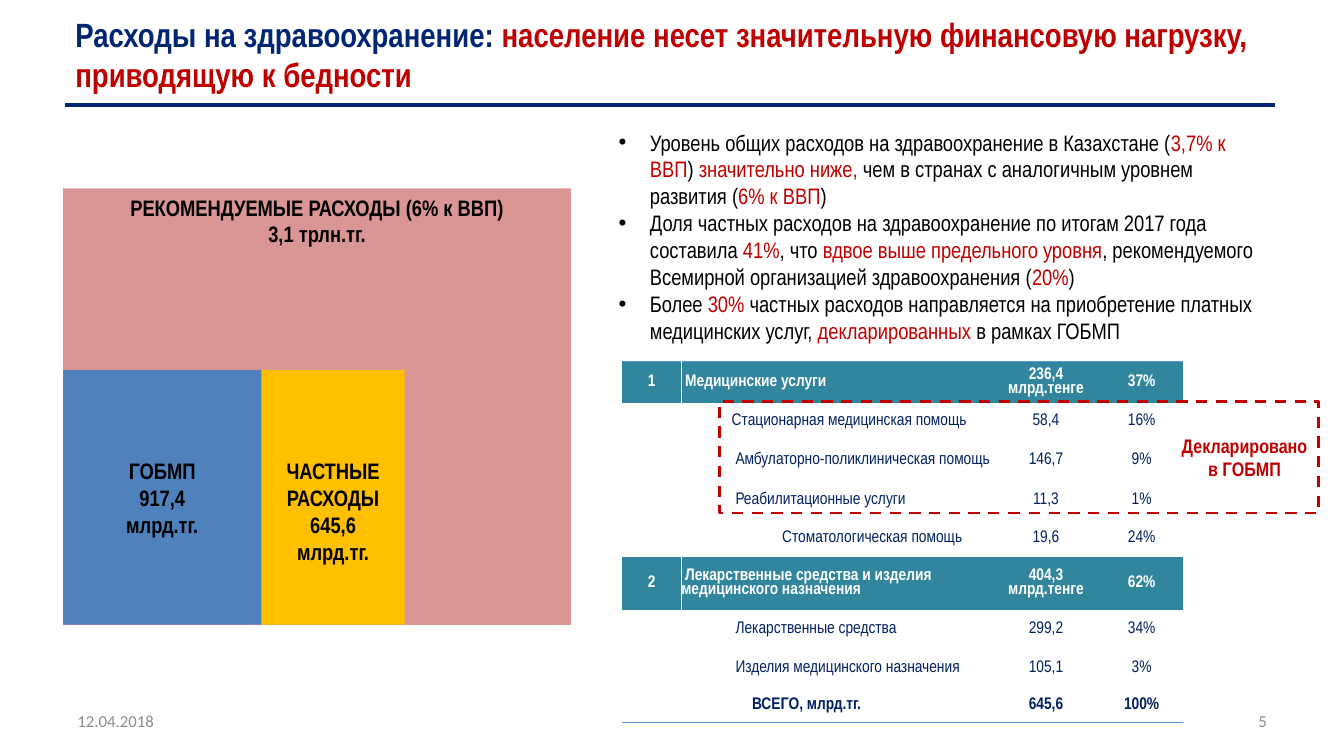
from dataclasses import dataclass
from typing import Optional

from lxml import etree
from pptx import Presentation
from pptx.dml.color import RGBColor
from pptx.enum.dml import MSO_LINE
from pptx.enum.shapes import MSO_CONNECTOR, MSO_SHAPE
from pptx.enum.text import MSO_ANCHOR, PP_ALIGN
from pptx.oxml.ns import qn
from pptx.util import Cm, Pt

LEFT, CENTER, RIGHT = PP_ALIGN.LEFT, PP_ALIGN.CENTER, PP_ALIGN.RIGHT
TOP, MIDDLE = MSO_ANCHOR.TOP, MSO_ANCHOR.MIDDLE
RECT, STRAIGHT, DASH = MSO_SHAPE.RECTANGLE, MSO_CONNECTOR.STRAIGHT, MSO_LINE.DASH


@dataclass(frozen=True)
class Theme:
    navy: str = "002673"
    ink: str = "002060"
    red: str = "C00000"
    black: str = "000000"
    white: str = "FFFFFF"
    gray: str = "8C8C8C"
    pink: str = "D99694"
    gold: str = "FFC000"
    blue: str = "4F81BD"
    teal: str = "31859C"
    rule: str = "5B9BD5"
    main: str = "Arial Narrow"
    foot: str = "Calibri"
    title: int = 24
    body: int = 16
    call: int = 14
    small: int = 12


THEME = Theme()


@dataclass(frozen=True)
class Style:
    size: int
    color: str
    bold: bool = False
    font: str = THEME.main
    align: PP_ALIGN = LEFT


@dataclass(frozen=True)
class Box:
    left: float
    top: float
    width: float
    height: float

    def cm(self) -> tuple:
        return Cm(self.left), Cm(self.top), Cm(self.width), Cm(self.height)


@dataclass(frozen=True)
class Block:
    box: Box
    fill: str
    lines: tuple
    anchor: MSO_ANCHOR = MIDDLE
    inset: float = 0.13


@dataclass(frozen=True)
class Label:
    box: Box
    lines: tuple
    style: Style
    anchor: MSO_ANCHOR = MIDDLE
    bullet: bool = False


@dataclass(frozen=True)
class Row:
    height: float
    num: str
    name: str
    total: str
    share: str
    indent: float = 1.27
    head: bool = False


# Parts between bars are red
LABELS = (
    Label(Box(1.65, 0.33, 31.06, 2.06),
          ("Расходы на здравоохранение: |население несет значительную финансовую нагрузку, приводящую к бедности",),
          Style(THEME.title, THEME.navy, True)),
    Label(Box(1.7, 17.65, 7.9, 1.02), ("12.04.2018",),
          Style(THEME.small, THEME.gray, font=THEME.foot)),
    Label(Box(24.28, 17.65, 7.9, 1.02), ("5",),
          Style(THEME.small, THEME.gray, font=THEME.foot, align=RIGHT)),
    Label(Box(15.34, 3.12, 16.61, 5.74), (
        "Уровень общих расходов на здравоохранение в Казахстане (|3,7% к ВВП|) |значительно ниже, |"
        "чем в странах с аналогичным уровнем развития (|6% к ВВП|)",
        "Доля частных расходов на здравоохранение по итогам 2017 года составила |41%|, что |"
        "вдвое выше предельного уровня|, рекомендуемого Всемирной организацией здравоохранения (|20%|)",
        "Более |30%| частных расходов направляется на приобретение платных медицинских услуг, |"
        "декларированных| в рамках ГОБМП",
    ), Style(THEME.body, THEME.black), TOP, True),
    Label(Box(29.5, 10.8, 3.73, 1.45), ("Декларировано в ГОБМП",),
          Style(THEME.call, THEME.red, True, align=CENTER), TOP),
)

BLOCKS = (
    Block(Box(1.59, 4.75, 12.8, 11), THEME.pink,
          ("РЕКОМЕНДУЕМЫЕ РАСХОДЫ (6% к ВВП)", "3,1 трлн.тг."), TOP),
    Block(Box(6.59, 9.33, 3.61, 6.41), THEME.gold,
          ("ЧАСТНЫЕ РАСХОДЫ", "645,6", "млрд.тг."), inset=0.81),
    Block(Box(1.59, 9.33, 5, 6.41), THEME.blue, ("ГОБМП", "917,4", "млрд.тг.")),
)

COLS = (1.5, 7.82, 2.74, 2.08)
ROWS = (
    Row(1.04, "1", " Медицинские услуги", "236,4 млрд.тенге", "37%", 0, True),
    Row(0.94, "", "Стационарная медицинская помощь", "58,4", "16%"),
    Row(1.02, "", " Амбулаторно-поликлиническая помощь", "146,7", "9%"),
    Row(0.99, "", " Реабилитационные услуги", "11,3", "1%"),
    Row(0.94, "", "Стоматологическая помощь", "19,6", "24%", 2.54),
    Row(1.32, "2", " Лекарственные средства и изделия медицинского назначения",
        "404,3 млрд.тенге", "62%", 0, True),
    Row(0.99, "", " Лекарственные средства", "299,2", "34%"),
    Row(0.99, "", " Изделия медицинского назначения", "105,1", "3%"),
    Row(0.86, "ВСЕГО, млрд.тг.", "", "645,6", "100%", 0),
)


def write(frame, lines: tuple, style: Style) -> None:
    for i, line in enumerate(lines):
        para = frame.paragraphs[0] if i == 0 else frame.add_paragraph()
        para.alignment = style.align
        for j, part in enumerate(line.split("|")):
            run = para.add_run()
            run.text = part
            font = run.font
            font.name, font.size, font.bold = style.font, Pt(style.size), style.bold
            font.color.rgb = RGBColor.from_string(THEME.red if j % 2 else style.color)


def add_label(slide, label: Label) -> None:
    frame = slide.shapes.add_textbox(*label.box.cm()).text_frame
    frame.word_wrap, frame.vertical_anchor = True, label.anchor
    write(frame, label.lines, label.style)
    if label.bullet:
        for para in frame.paragraphs:
            props = para._p.get_or_add_pPr()
            props.set("marL", str(Cm(0.79)))
            props.set("indent", str(-Cm(0.79)))
            etree.SubElement(props, qn("a:buFont")).set("typeface", "Arial")
            etree.SubElement(props, qn("a:buChar")).set("char", "•")


def add_rect(slide, box: Box):
    shape = slide.shapes.add_shape(RECT, *box.cm())
    shape.shadow.inherit = False
    return shape


def add_block(slide, block: Block) -> None:
    shape = add_rect(slide, block.box)
    shape.fill.solid()
    shape.fill.fore_color.rgb = RGBColor.from_string(block.fill)
    shape.line.fill.background()
    frame = shape.text_frame
    frame.word_wrap, frame.vertical_anchor = True, block.anchor
    frame.margin_top = Cm(block.inset)
    write(frame, block.lines, Style(THEME.body, THEME.black, True, align=CENTER))


def set_edge(cell, side: str, color: Optional[str]) -> None:
    edge = etree.SubElement(cell._tc.get_or_add_tcPr(), qn(f"a:ln{side}"), w=str(Pt(1)))
    if color:
        fill = etree.SubElement(edge, qn("a:solidFill"))
        etree.SubElement(fill, qn("a:srgbClr")).set("val", color)
        etree.SubElement(edge, qn("a:prstDash")).set("val", "solid")
    else:
        etree.SubElement(edge, qn("a:noFill"))


def add_costs(slide) -> None:
    box = Box(15.67, 9.11, sum(COLS), sum(row.height for row in ROWS))
    table = slide.shapes.add_table(len(ROWS), len(COLS), *box.cm()).table
    table.first_row = table.horz_banding = False
    for col, width in zip(table.columns, COLS):
        col.width = Cm(width)
    last = len(ROWS) - 1
    for r, row in enumerate(ROWS):
        table.rows[r].height = Cm(row.height)
        for c, text in enumerate((row.num, row.name, row.total, row.share)):
            cell = table.cell(r, c)
            cell.vertical_anchor = MIDDLE
            cell.margin_left = Cm(row.indent if c == 1 else 0)
            cell.margin_right = cell.margin_top = cell.margin_bottom = 0
            # Borders
            set_edge(cell, "L", THEME.white if row.head and c == 1 else None)
            set_edge(cell, "R", THEME.white if row.head and c == 0 else None)
            set_edge(cell, "T", THEME.rule if r == 0 else None)
            set_edge(cell, "B", THEME.rule if r == last else None)
            if row.head:
                cell.fill.solid()
                cell.fill.fore_color.rgb = RGBColor.from_string(THEME.teal)
            else:
                cell.fill.background()
            if text:
                write(cell.text_frame, (text,), Style(
                    THEME.small, THEME.white if row.head else THEME.ink,
                    row.head or r == last, align=LEFT if c == 1 else CENTER))
                cell.text_frame.paragraphs[0].line_spacing = 0.9
    table.cell(last, 0).merge(table.cell(last, 1))


def main() -> None:
    deck = Presentation()
    deck.slide_width, deck.slide_height = Cm(33.87), Cm(19.05)
    slide = deck.slides.add_slide(deck.slide_layouts[6])

    # Rule under the title
    rule = slide.shapes.add_connector(STRAIGHT, Cm(1.65), Cm(2.64), Cm(32.13), Cm(2.64))
    rule.line.color.rgb, rule.line.width = RGBColor.from_string(THEME.navy), Pt(3)
    etree.SubElement(rule._element.spPr, qn("a:effectLst"))

    # Spending areas, table and texts
    for block in BLOCKS:
        add_block(slide, block)
    add_costs(slide)
    for label in LABELS:
        add_label(slide, label)

    # Dashed frame around declared services
    frame = add_rect(slide, Box(18.14, 10.11, 15.09, 2.82))
    frame.fill.background()
    frame.line.color.rgb, frame.line.width = RGBColor.from_string(THEME.red), Pt(2)
    frame.line.dash_style = DASH

    deck.save("out.pptx")


if __name__ == "__main__":
    main()
